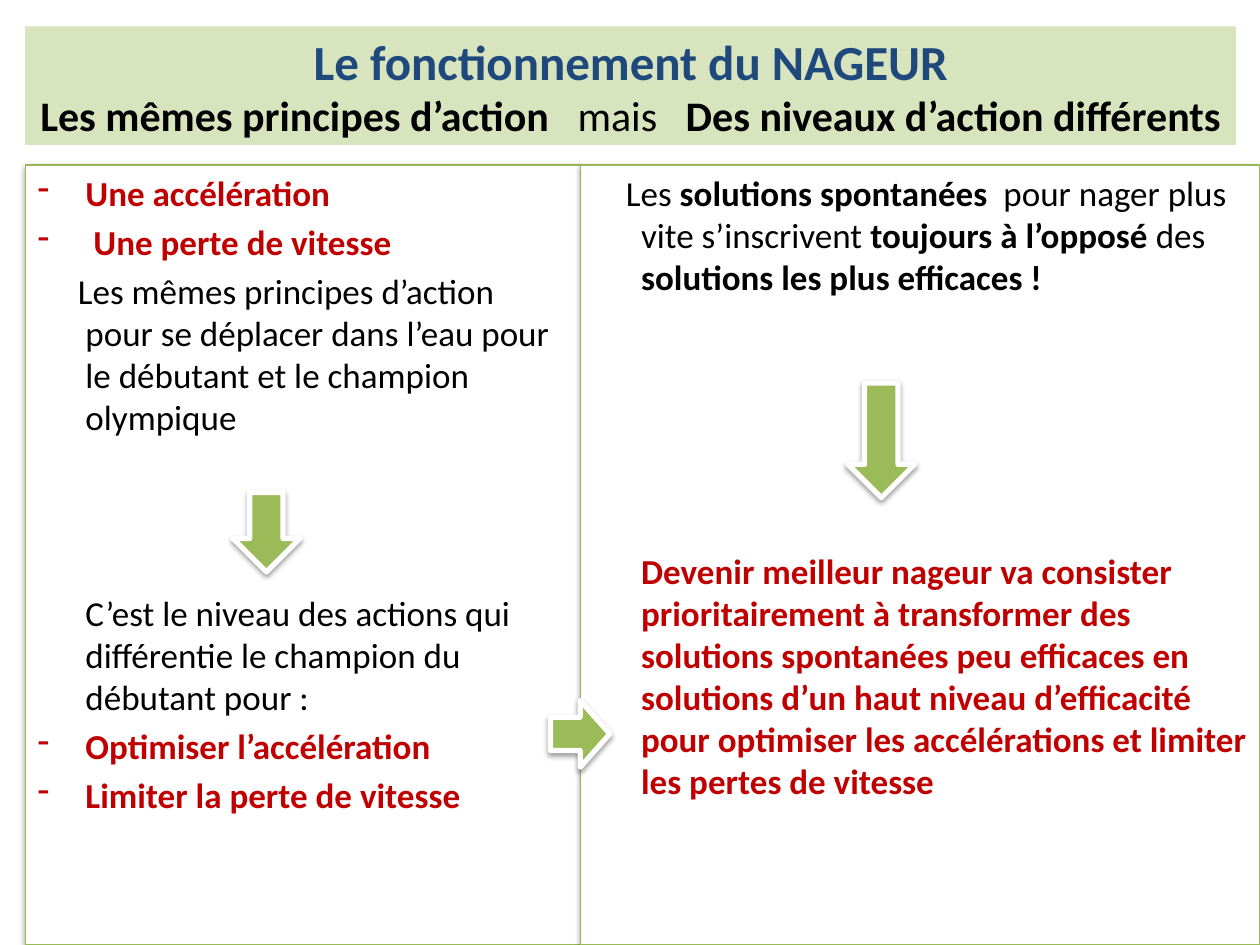
import pptx
import pptx.dml.color
import pptx.enum.shapes
import pptx.enum.text
import pptx.oxml
import pptx.oxml.ns
import pptx.util
from pptx.util import Inches

SHAPES = pptx.enum.shapes.MSO_SHAPE
TEXT = pptx.enum.text
BLACK, RED, NAVY = "000000", "C00000", "1F497D"
PANEL_TOP, PANEL_HEIGHT = 1.31, 6.19
HANGING = 0.38
LINE_GAP = 4


def rgb(color):
    return pptx.dml.color.RGBColor.from_string(color)


def set_values(target, values):
    for name, value in values.items():
        setattr(target, name, value)


def fill_solid(shape, color):
    shape.fill.solid()
    shape.fill.fore_color.rgb = rgb(color)


def add_xml(parent, tag, content="", **attributes):
    pairs = "".join(f' {key}="{value}"' for key, value in attributes.items())
    namespace = pptx.oxml.ns.nsdecls("a")
    parent.append(pptx.oxml.parse_xml(f"<a:{tag} {namespace}{pairs}>{content}</a:{tag}>"))


def add_shadow(shape):
    shape.shadow.inherit = False
    effects = shape._element.spPr.find(pptx.oxml.ns.qn("a:effectLst"))
    black = '<a:srgbClr val="000000"><a:alpha val="38000"/></a:srgbClr>'
    add_xml(effects, "outerShdw", black, blurRad=39400, dist=20300, dir=5400000, rotWithShape=0)


def add_block(slide, kind, box, fill, line, line_width):
    block = slide.shapes.add_shape(kind, *map(Inches, box))
    fill_solid(block, fill)
    block.line.color.rgb = rgb(line)
    block.line.width = pptx.util.Pt(line_width)
    add_shadow(block)
    return block


def add_run(paragraph, text, size, color, bold):
    run = paragraph.add_run()
    run.text = text
    set_values(run.font, {"name": "Calibri", "size": pptx.util.Pt(size), "bold": bold})
    run.font.color.rgb = rgb(color)
    return run


def format_title(slide):
    title = slide.shapes.title
    set_values(title, {"left": Inches(0.2), "top": Inches(0.21),
                       "width": Inches(9.61), "height": Inches(0.94)})
    fill_solid(title, "D7E4BD")
    set_values(title.text_frame, {
        "word_wrap": True, "auto_size": TEXT.MSO_AUTO_SIZE.NONE,
        "vertical_anchor": TEXT.MSO_ANCHOR.MIDDLE,
        "margin_left": 0, "margin_right": 0, "margin_top": 0, "margin_bottom": 0})
    heading = title.text_frame.paragraphs[0]
    heading.alignment = TEXT.PP_ALIGN.CENTER
    add_run(heading, "Le fonctionnement du NAGEUR", 28, NAVY, True)
    heading.add_line_break()
    for text, bold in (("Les mêmes principes d’action", True), (" ", False),
                       ("mais", False), (" ", False),
                       ("Des niveaux d’action différents", True)):
        run = add_run(heading, text, 24, BLACK, bold)
        if text == " ":
            run._r.get_or_add_rPr().set("spc", "1080")


def add_panel(slide, left, width, paragraphs):
    panel = add_block(slide, SHAPES.RECTANGLE, (left, PANEL_TOP, width, PANEL_HEIGHT),
                      "FFFFFF", "98B955", 0.75)
    frame = panel.text_frame
    set_values(frame, {"word_wrap": True, "vertical_anchor": TEXT.MSO_ANCHOR.TOP})
    for index, (runs, color, first_indent, gap, bullet) in enumerate(paragraphs):
        paragraph = frame.paragraphs[0] if index == 0 else frame.add_paragraph()
        set_values(paragraph, {"alignment": TEXT.PP_ALIGN.LEFT,
                               "space_before": pptx.util.Pt(gap)})
        properties = paragraph._p.get_or_add_pPr()
        properties.set("marL", str(Inches(HANGING)))
        properties.set("indent", str(Inches(first_indent)))
        if bullet:
            add_xml(properties, "buChar", char="-")
        else:
            add_xml(properties, "buNone")
        for text, bold in runs:
            add_run(paragraph, text, 20, color, bold)


def red_item(text):
    return [(text, True)], RED, -HANGING, LINE_GAP, True


def plain_text(runs, color=BLACK, first_indent=0, gap=LINE_GAP):
    return runs, color, first_indent, gap, False


def main():
    presentation = pptx.Presentation()
    set_values(presentation, {"slide_width": Inches(10), "slide_height": Inches(7.5)})
    slide = presentation.slides.add_slide(presentation.slide_layouts[5])
    format_title(slide)

    shared_principles = [
        red_item("Une accélération"),
        red_item(" Une perte de vitesse"),
        plain_text([("Les mêmes principes d’action pour se déplacer dans l’eau pour "
                     "le débutant et le champion olympique", False)], first_indent=-0.06),
        plain_text([("C’est le niveau des actions qui différentie le champion du "
                     "débutant pour :", False)], gap=88),
        red_item("Optimiser l’accélération"),
        red_item("Limiter la perte de vitesse"),
    ]
    action_levels = [
        plain_text([("Les", False), (" solutions spontanées ", True),
                    (" pour nager plus vite s’inscrivent ", False),
                    ("toujours à l’opposé ", True), ("des ", False),
                    ("solutions les plus efficaces !", True)], first_indent=-0.12),
        plain_text([("Devenir meilleur nageur va consister prioritairement à transformer "
                     "des solutions spontanées peu efficaces en solutions d’un haut niveau "
                     "d’efficacité pour optimiser les accélérations et limiter les pertes "
                     "de vitesse", True)], color=RED, gap=144),
    ]
    add_panel(slide, 0.2, 4.41, shared_principles)
    add_panel(slide, 4.61, 5.39, action_levels)

    for direction, box in ((SHAPES.DOWN_ARROW, (1.85, 3.91, 0.53, 0.63)),
                           (SHAPES.DOWN_ARROW, (6.73, 3.04, 0.53, 0.91)),
                           (SHAPES.RIGHT_ARROW, (4.37, 5.56, 0.47, 0.53))):
        add_block(slide, direction, box, "9BBB59", "FFFFFF", 3)

    presentation.save("out.pptx")


if __name__ == "__main__":
    main()
